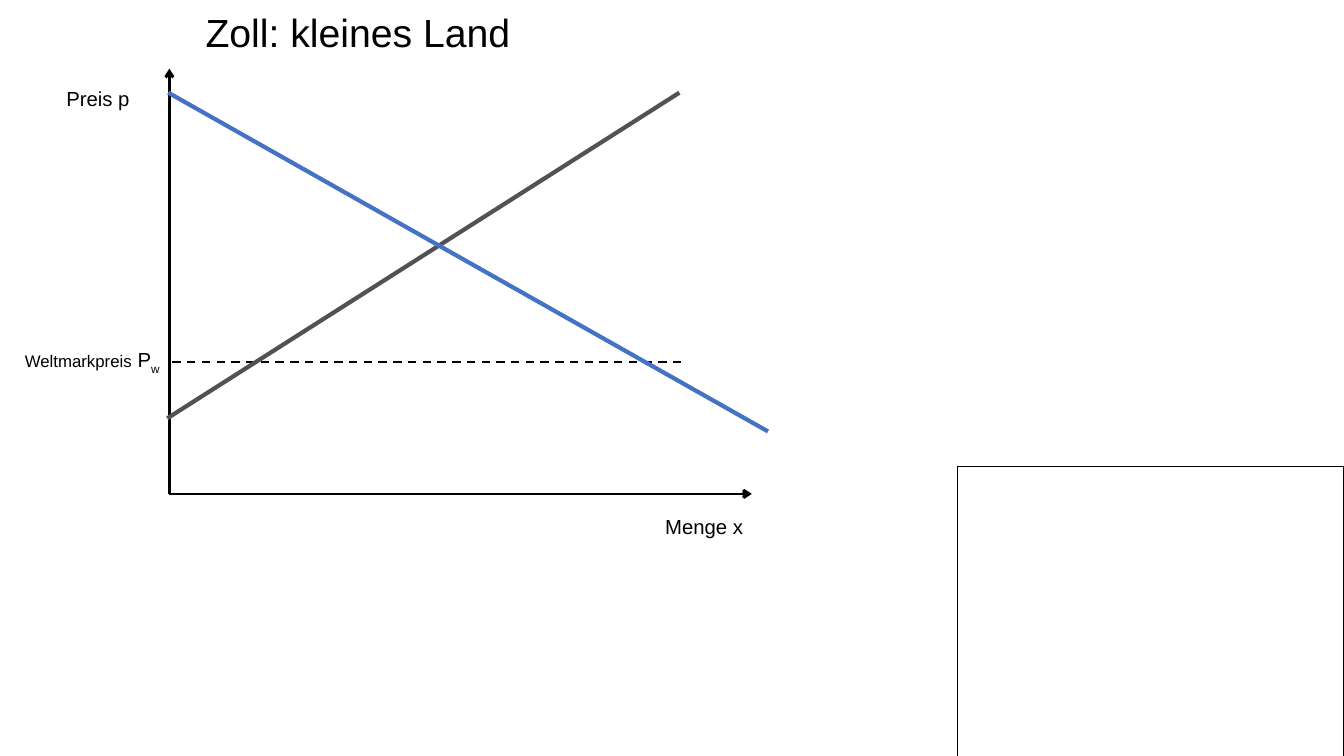
from lxml.etree import SubElement
from pptx import Presentation
from pptx.dml.color import RGBColor
from pptx.enum.dml import MSO_LINE as Dash
from pptx.enum.shapes import MSO_CONNECTOR as Connector, MSO_SHAPE as Shape
from pptx.enum.text import MSO_AUTO_SIZE as AutoSize, PP_ALIGN as Align
from pptx.oxml.ns import qn
from pptx.util import Pt

BLACK = RGBColor(0x00, 0x00, 0x00)
GRAY = RGBColor(0x52, 0x52, 0x52)
BLUE = RGBColor(0x44, 0x72, 0xC4)
FONT = "Arial"
LABEL = 14.5

# Content: each label is (runs, box, format), each run is (text, size, baseline)
ORIGIN = (121, 352.8)
LABELS = [
    ([("Zoll: kleines Land", 28, 0)], (103, 2.2, 305.3, 39.6), {}),
    ([("Preis p", LABEL, 0)], (34.6, 58.3, 70.6, 25.2), {}),
    ([("Menge x", LABEL, 0)], (468, 363.6, 71.3, 25.2),
     {"align": Align.LEFT, "wrap": False}),
    ([("Weltmarkpreis", 12, 0), (" P", LABEL, 0), ("w", LABEL, -25000)],
     (3.6, 244.8, 124.6, 23.8), {}),
]
AXIS_ENDS = [(121, 49), (537.1, 352.8)]
WORLD_PRICE = ((486.7, 258.5), (120.2, 258.5))
SUPPLY = ((119.5, 298.8), (485.3, 66.2))
DEMAND = ((120.2, 66.2), (548.6, 308.2))
EMPTY_FRAME = (684, 333.4, 275.8, 207.4)


def add_label(page, runs, place, align=Align.CENTER, wrap=True):
    box = page.shapes.add_textbox(*map(Pt, place))
    frame = box.text_frame
    frame.word_wrap = wrap
    frame.auto_size = AutoSize.NONE
    para = frame.paragraphs[0]
    para.alignment = align
    for text, size, baseline in runs:
        span = para.add_run()
        span.text = text
        span.font.name = FONT
        span.font.size = Pt(size)
        span.font.color.rgb = BLACK
        if baseline:
            span._r.get_or_add_rPr().set("baseline", str(baseline))


def add_line(page, start, end, color=BLACK, width=2, dash=None, arrow=False):
    line = page.shapes.add_connector(
        Connector.STRAIGHT, *map(Pt, start + end))
    line.line.color.rgb = color
    line.line.width = Pt(width)
    if dash:
        line.line.dash_style = dash
    if arrow:
        SubElement(line.line._get_or_add_ln(), qn("a:tailEnd"), type="arrow")
    SubElement(line._element.spPr, qn("a:effectLst"))


def main():
    deck = Presentation()
    deck.slide_width, deck.slide_height = Pt(960), Pt(540)
    page = deck.slides.add_slide(deck.slide_layouts[6])

    # Axes and labels
    for end in AXIS_ENDS:
        add_line(page, ORIGIN, end, arrow=True)
    for runs, place, style in LABELS:
        add_label(page, runs, place, **style)

    # World price, supply and demand
    add_line(page, *WORLD_PRICE, width=1.5, dash=Dash.DASH)
    add_line(page, *SUPPLY, color=GRAY, width=3)
    add_line(page, *DEMAND, color=BLUE, width=3)

    # Empty frame at the lower right
    frame = page.shapes.add_shape(Shape.RECTANGLE, *map(Pt, EMPTY_FRAME))
    frame.shadow.inherit = False
    frame.fill.background()
    frame.line.color.rgb = BLACK
    frame.line.width = Pt(1)

    deck.save("out.pptx")


if __name__ == "__main__":
    main()
